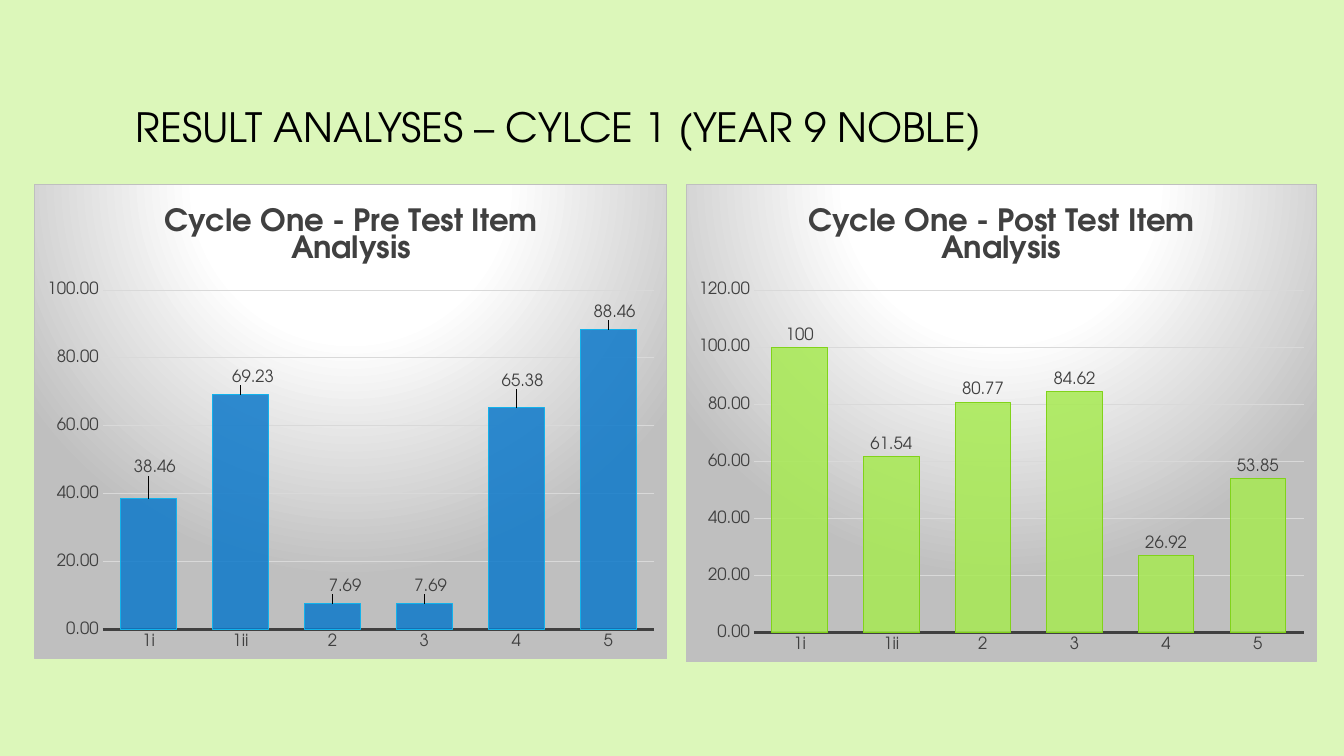
from dataclasses import dataclass

import pptx
import pptx.chart.data
import pptx.dml.color
import pptx.enum.chart
import pptx.enum.text
import pptx.oxml
import pptx.oxml.ns
import pptx.util
from pptx.util import Inches


@dataclass(frozen=True)
class Theme:
    font: str = "TeX Gyre Adventor"
    background: str = "DCF7BA"
    title: str = "000000"
    text: str = "404040"
    grid: str = "D9D9D9"
    panel_light: str = "FFFFFF"
    panel_dark: str = "BFBFBF"
    blue: str = "0D79CA"
    blue_line: str = "12B2EB"
    green: str = "A7EA52"
    green_line: str = "81D31A"
    title_size: float = 28.8
    chart_title_size: float = 22
    label_size: float = 12


THEME = Theme()
ITEMS = ["1i", "1ii", "2", "3", "4", "5"]
PRE_SCORES = [38.46, 69.23, 7.69, 7.69, 65.38, 88.46]
POST_SCORES = [100, 61.54, 80.77, 84.62, 26.92, 53.85]
PRE_LABEL_SHIFTS = [(0.01, -0.04), (0.02, -0.01), (0.02, -0.01),
                    (0.01, -0.01), (0.01, -0.03), (0.01, -0.01)]


def rgb(color):
    return pptx.dml.color.RGBColor.from_string(color)


def style_font(font, size, color, bold=False):
    font.name = THEME.font
    font.size = pptx.util.Pt(size)
    font.bold = bold
    font.color.rgb = rgb(color)


def style_line(line, color, width):
    line.color.rgb = rgb(color)
    line.width = pptx.util.Pt(width)


def add_title(slide, text):
    box = slide.shapes.add_textbox(Inches(1.25), Inches(0.67), Inches(8.79), Inches(1.16))
    tf = box.text_frame
    tf.word_wrap = True
    tf.vertical_anchor = pptx.enum.text.MSO_ANCHOR.MIDDLE
    tf.text = text
    style_font(tf.paragraphs[0].runs[0].font, THEME.title_size, THEME.title)


def fill_panel(chart):
    stops = [(0, THEME.panel_light), (39, THEME.panel_light), (100, THEME.panel_dark)]
    stop_xml = "".join(
        f'<a:gs pos="{pos * 1000}"><a:srgbClr val="{color}"/></a:gs>' for pos, color in stops)
    panel = pptx.oxml.parse_xml(
        f'<c:spPr {pptx.oxml.ns.nsdecls("c", "a")}>'
        f'<a:gradFill><a:gsLst>{stop_xml}</a:gsLst><a:path path="circle">'
        '<a:fillToRect l="50000" t="-80000" r="50000" b="180000"/></a:path></a:gradFill>'
        f'<a:ln w="9525"><a:solidFill><a:srgbClr val="{THEME.panel_dark}"/></a:solidFill></a:ln>'
        '</c:spPr>')
    chart.element.find(pptx.oxml.ns.qn("c:chart")).addnext(panel)


def style_axes(chart, maximum):
    tick_mark = pptx.enum.chart.XL_TICK_MARK
    for axis in (chart.category_axis, chart.value_axis):
        axis.major_tick_mark = axis.minor_tick_mark = tick_mark.NONE
        style_font(axis.tick_labels.font, THEME.label_size, THEME.text)
    style_line(chart.category_axis.format.line, THEME.text, 1.5)
    axis = chart.value_axis
    axis.minimum_scale, axis.maximum_scale, axis.major_unit = 0, maximum, 20
    axis.format.line.fill.background()
    axis.tick_labels.number_format = "0.00"
    axis.tick_labels.number_format_is_linked = False
    style_line(axis.major_gridlines.format.line, THEME.grid, 0.75)


def style_bars(series, fill, line):
    series.format.fill.solid()
    series.format.fill.fore_color.rgb = rgb(fill)
    color = series.format.fill._xPr.find(".//" + pptx.oxml.ns.qn("a:srgbClr"))
    color.append(pptx.oxml.parse_xml(f'<a:alpha {pptx.oxml.ns.nsdecls("a")} val="85000"/>'))
    style_line(series.format.line, line, 0.75)


def label_bars(series, number_format, shifts):
    outside = pptx.enum.chart.XL_LABEL_POSITION.OUTSIDE_END
    labels = series.data_labels
    labels.show_value = True
    labels.position = outside
    labels.number_format = number_format
    labels.number_format_is_linked = False
    style_font(labels.font, THEME.label_size, THEME.text)
    for i, (dx, dy) in enumerate(shifts):
        label = series.points[i].data_label
        style_font(label.font, THEME.label_size, THEME.text)
        label.position = outside
        layout = pptx.oxml.parse_xml(
            f'<c:layout {pptx.oxml.ns.nsdecls("c")}><c:manualLayout>'
            f'<c:x val="{dx}"/><c:y val="{dy}"/></c:manualLayout></c:layout>')
        label._dLbl.find(pptx.oxml.ns.qn("c:idx")).addnext(layout)


def add_score_chart(slide, left, width, height, title, scores, maximum, fill, line,
                    number_format="General", shifts=()):
    data = pptx.chart.data.CategoryChartData()
    data.categories = ITEMS
    data.add_series("Series 1", scores)
    chart = slide.shapes.add_chart(
        pptx.enum.chart.XL_CHART_TYPE.COLUMN_CLUSTERED,
        Inches(left), Inches(1.83), Inches(width), Inches(height), data).chart
    chart.has_legend = False
    chart.font.name = THEME.font
    chart.chart_title.text_frame.text = title
    run = chart.chart_title.text_frame.paragraphs[0].runs[0]
    style_font(run.font, THEME.chart_title_size, THEME.text, bold=True)
    chart.chart_title.include_in_layout = False
    fill_panel(chart)
    style_axes(chart, maximum)
    plot = chart.plots[0]
    plot.gap_width = 65
    plot.vary_by_categories = False
    style_bars(plot.series[0], fill, line)
    label_bars(plot.series[0], number_format, shifts)


def main():
    prs = pptx.Presentation()
    prs.slide_width, prs.slide_height = Inches(13.33), Inches(7.5)
    slide = prs.slides.add_slide(prs.slide_layouts[6])
    slide.background.fill.solid()
    slide.background.fill.fore_color.rgb = rgb(THEME.background)
    add_title(slide, "RESULT ANALYSES – CYLCE 1 (YEAR 9 NOBLE)")
    add_score_chart(slide, 0.34, 6.28, 4.71, "Cycle One - Pre Test Item Analysis",
                    PRE_SCORES, 100, THEME.blue, THEME.blue_line, "0.00", PRE_LABEL_SHIFTS)
    add_score_chart(slide, 6.8, 6.26, 4.74, "Cycle One - Post Test Item Analysis",
                    POST_SCORES, 120, THEME.green, THEME.green_line)
    prs.save("out.pptx")


if __name__ == "__main__":
    main()
